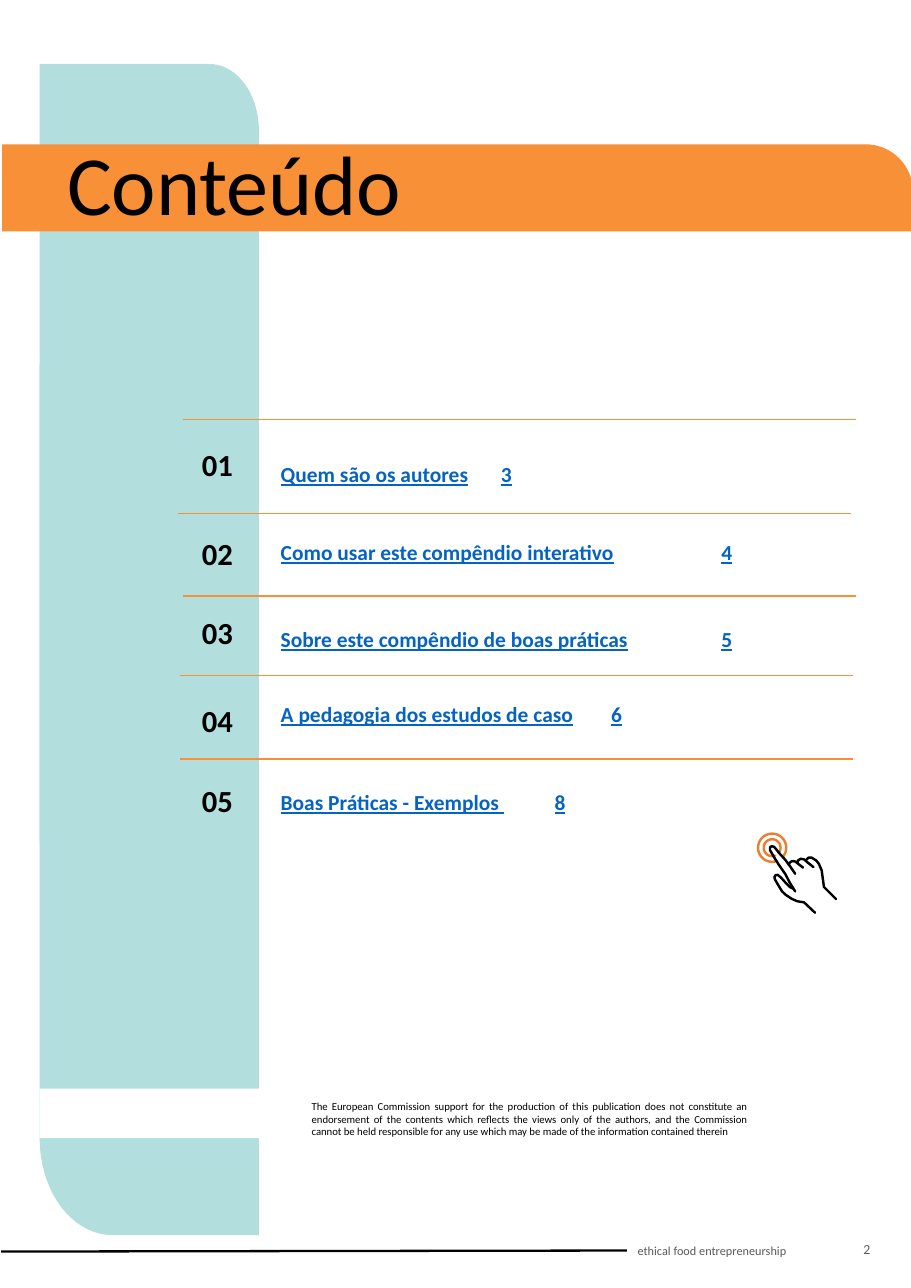
from math import cos, sin, radians
from lxml.etree import SubElement
from pptx import Presentation
from pptx.dml.color import RGBColor
from pptx.enum.shapes import MSO_CONNECTOR, MSO_SHAPE
from pptx.enum.text import MSO_ANCHOR, PP_ALIGN
from pptx.oxml.ns import qn
from pptx.util import Pt

THEME = {
    "teal": "B2DEDD", "orange": "F79037", "ring": "ED7D31", "link": "0563C1",
    "black": "000000", "grey": "595959", "white": "FFFFFF", "font": "Calibri",
    "title": 55, "number": 20, "entry": 14, "page": 9, "footer": 8, "notice": 7,
}
PAGE_SIZE = (595.44, 841.68)
TITLE = "Conteúdo"
NOTICE = (
    "The European Commission support for the production of this publication does not "
    "constitute an endorsement of the contents which reflects the views only of the authors, "
    "and the Commission cannot be held responsible for any use which may be made of the "
    "information contained therein"
)
FOOTER = "ethical food entrepreneurship"
PAGE_NUMBER = "2"

# (entry, page, number top, entry top, tab size, tab position)
ENTRIES = [
    ("Quem são os autores", "3", 290.9, 288.7, 32, 144),
    ("Como usar este compêndio interativo", "4", 349.2, 347, 14, 288),
    ("Sobre este compêndio de boas práticas", "5", 401, 403.9, 8, 288),
    ("A pedagogia dos estudos de caso", "6", 458.6, 452.9, 14, 216),
    ("Boas Práticas - Exemplos ", "8", 510.5, 510.5, 14, 179),
]
DIVIDERS = [(119.5, 274.3), (116.6, 335.5), (119.5, 389.5), (117.4, 441.4), (117.4, 496.1)]
DIVIDER_LENGTH = 439.9

PANEL_TOPS = (41.8, 237.6)
RING_CENTRE = (504.7, 554)
RING_RADII = (9.2, 5.5)
HAND = {
    "index": [(519.8, 582.5), (516.2, 576.7), (513.4, 571.3), (508.7, 564.5), (506.2, 560.5),
              (503.3, 555.5), (503.3, 553.7), (504.4, 553), (505.8, 553.3), (506.9, 554.4),
              (509.8, 558), (513.4, 562), (516.6, 566.3), (519.8, 571)],
    "thumb": [(518.4, 580.7), (516.2, 579.6), (513.4, 576.7), (510.5, 573.5), (508.3, 571.7),
              (506.9, 572), (506.2, 573.1), (506.5, 574.6), (509, 578.9), (511.2, 582.5),
              (513.4, 584.6), (517.7, 587.5), (521.3, 589), (525.6, 589.7), (532.8, 596.5)],
    "middle": [(515.5, 565.2), (516.2, 563.8), (517.7, 562.7), (519.8, 563), (524.9, 567)],
    "ring": [(521.3, 564.1), (521.6, 562.3), (523.4, 561.2), (525.6, 561.6), (528.1, 563.8),
             (531.7, 566.6)],
    "little": [(527, 562), (528.5, 560.5), (530.6, 560.5), (533.5, 562.3), (535.3, 564.5),
               (537.1, 568.8), (538.6, 579.6), (546.5, 587.5)],
}

deck = Presentation()
deck.slide_width, deck.slide_height = map(Pt, PAGE_SIZE)
page = deck.slides.add_slide(deck.slide_layouts[6])


def color(name):
    return RGBColor.from_string(THEME[name])


def paint(shape, name):
    shape.shadow.inherit = False
    shape.fill.solid()
    shape.fill.fore_color.rgb = color(name)
    shape.line.fill.background()


def arc(centre, radii, start, end, step=5):
    return [(centre[0] + radii[0] * cos(radians(angle)), centre[1] + radii[1] * sin(radians(angle)))
            for angle in range(start, end + 1, step)]


def outline(points, close):
    points = [(Pt(x), Pt(y)) for x, y in points]
    builder = page.shapes.build_freeform(*points[0])
    builder.add_line_segments(points[1:], close=close)
    return builder.convert_to_shape()


def rounded_block(left, top, width, height, top_right, bottom_left, name):
    right, bottom = left + width, top + height
    points = [(left, top)]
    points += arc((right - top_right[0], top + top_right[1]), top_right, -90, 0)
    points += [(right, bottom)]
    points += arc((left + bottom_left[0], bottom - bottom_left[1]), bottom_left, 90, 180)
    paint(outline(points, True), name)


def stroke(points, name, width):
    shape = outline(points, False)
    shape.shadow.inherit = False
    shape.fill.background()
    shape.line.color.rgb = color(name)
    shape.line.width = Pt(width)
    line = shape.line._get_or_add_ln()
    line.set("cap", "rnd")
    SubElement(line, qn("a:round"))


def rule(start, end, name, width):
    line = page.shapes.add_connector(MSO_CONNECTOR.STRAIGHT, *map(Pt, start + end))
    line.line.color.rgb = color(name)
    line.line.width = Pt(width)
    SubElement(line._element.spPr, qn("a:effectLst"))


def write(place, spans, name, anchor=MSO_ANCHOR.MIDDLE, align=PP_ALIGN.LEFT, spacing=1, tab=None):
    box = page.shapes.add_textbox(*map(Pt, place))
    frame = box.text_frame
    frame.word_wrap = True
    frame.vertical_anchor = anchor
    para = frame.paragraphs[0]
    para.alignment = align
    para.line_spacing = spacing
    if tab:
        tabs = SubElement(para._p.get_or_add_pPr(), qn("a:tabLst"))
        SubElement(tabs, qn("a:tab"), pos=str(Pt(tab)), algn="l")
    for text, size, form in spans:
        span = para.add_run()
        span.text = text
        span.font.color.rgb = color(name)
        for key, value in {"name": THEME["font"], "size": Pt(size), **form}.items():
            setattr(span.font, key, value)


write((409.7, 802.8, 134.6, 28.8), [(FOOTER, THEME["footer"], {})], "grey")
rule((0.7, 817.9), (409.7, 817.2), "black", 1.5)
for top in PANEL_TOPS:
    rounded_block(25.9, top, 143.3, 569.5, (32.4, 43.2), (47.5, 63.4), "teal")
band = page.shapes.add_shape(MSO_SHAPE.RECTANGLE, *map(Pt, (25.9, 711.4, 205.9, 32.4)))
paint(band, "white")
rounded_block(1.4, 94.3, 595.4, 56.9, (31, 31), (0, 0), "orange")

for left, top in DIVIDERS:
    rule((left, top), (left + DIVIDER_LENGTH, top), "orange", 1)

write((196.6, 715, 298.8, 32.4), [(NOTICE, THEME["notice"], {})], "black",
      MSO_ANCHOR.TOP, PP_ALIGN.JUSTIFY)
write((36.7, 90, 536.4, 84.2), [(TITLE, THEME["title"], {})], "black",
      MSO_ANCHOR.TOP, spacing=0.9)

bold = {"bold": True}
linked = {"bold": True, "underline": True}
for index, (entry, target, number_top, entry_top, tab_size, tab) in enumerate(ENTRIES, 1):
    write((116.6, number_top, 51.1, 27.4), [(f"{index:02}", THEME["number"], bold)], "black",
          align=PP_ALIGN.CENTER, spacing=0.9)
    spans = [(entry, THEME["entry"], linked), ("\t", tab_size, bold),
             (target, THEME["entry"], linked)]
    write((176.4, entry_top, 381.6, 27.4), spans, "link", tab=tab)

write((542.9, 797.8, 33.1, 36.7), [(PAGE_NUMBER, THEME["page"], {})], "grey",
      align=PP_ALIGN.RIGHT)

for radius in RING_RADII:
    stroke(arc(RING_CENTRE, (radius, radius), 70, 400), "ring", 1.6)
for points in HAND.values():
    stroke(points, "black", 1.6)

deck.save("out.pptx")
